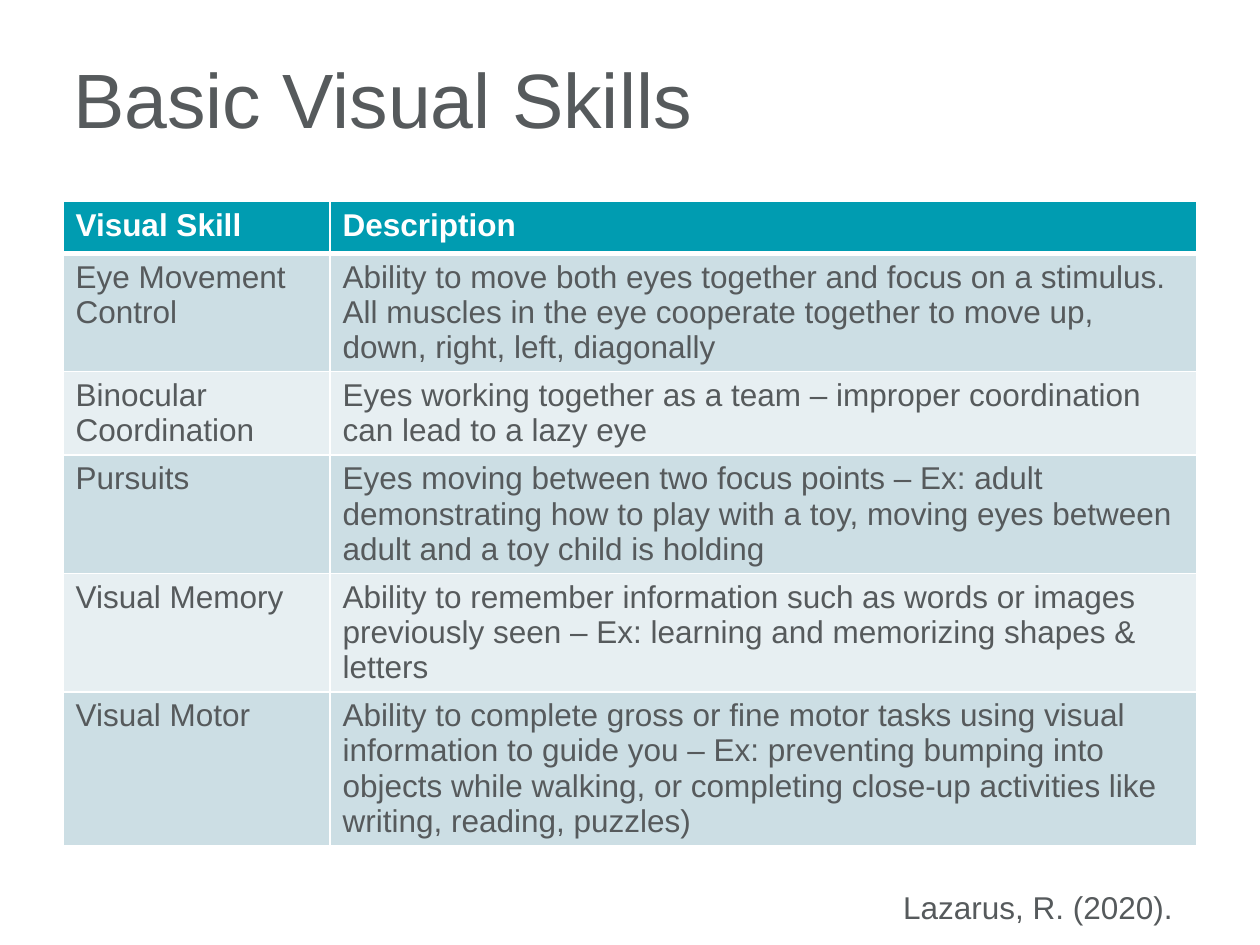
from lxml.etree import SubElement
from pptx import Presentation
from pptx.dml.color import RGBColor
from pptx.enum.text import MSO_ANCHOR, MSO_AUTO_SIZE, PP_ALIGN
from pptx.oxml.ns import qn
from pptx.util import Inches, Pt

COLORS = {
    "text": "565A5C",
    "white": "FFFFFF",
    "header": "009CB1",
    "odd_row": "CCDEE4",
    "even_row": "E7EFF2",
}
TITLE_FONT = {"name": "Arial", "size": Pt(44), "bold": False}
BODY_FONT = {"name": "Arial", "size": Pt(18), "bold": False}
HEADER_FONT = {**BODY_FONT, "bold": True}

SKILLS = [
    ("Visual Skill", "Description"),
    ("Eye Movement Control",
     "Ability to move both eyes together and focus on a stimulus. All muscles "
     "in the eye cooperate together to move up, down, right, left, diagonally"),
    ("Binocular Coordination",
     "Eyes working together as a team – improper coordination can lead to a "
     "lazy eye"),
    ("Pursuits",
     "Eyes moving between two focus points – Ex: adult demonstrating how to "
     "play with a toy, moving eyes between adult and a toy child is holding"),
    ("Visual Memory",
     "Ability to remember information such as words or images previously seen "
     "– Ex: learning and memorizing shapes & letters"),
    ("Visual Motor",
     "Ability to complete gross or fine motor tasks using visual information "
     "to guide you – Ex: preventing bumping into objects while walking, or "
     "completing close-up activities like writing, reading, puzzles)"),
]
COLUMN_WIDTHS = (2.12, 6.88)
ROW_HEIGHT = 0.41


def set_text(text_frame, text, font_format, color):
    text_frame.text = text
    font = text_frame.paragraphs[0].font
    for name, value in font_format.items():
        setattr(font, name, value)
    font.color.rgb = RGBColor.from_string(COLORS[color])


def set_borders(cell, bottom_width):
    """Draw white rules on the four sides of a cell, before its fill is set."""
    properties = cell._tc.get_or_add_tcPr()
    widths = {"a:lnL": 1, "a:lnR": 1, "a:lnT": 1, "a:lnB": bottom_width}
    for tag, width in widths.items():
        line = SubElement(properties, qn(tag), w=str(Pt(width)))
        fill = SubElement(line, qn("a:solidFill"))
        SubElement(fill, qn("a:srgbClr"), val=COLORS["white"])


def add_title(slide, text):
    title = slide.shapes.title
    title.left, title.top = Inches(0.5), Inches(0.3)
    title.width, title.height = Inches(6.79), Inches(1.25)
    text_frame = title.text_frame
    set_text(text_frame, text, TITLE_FONT, "text")
    text_frame.paragraphs[0].alignment = PP_ALIGN.LEFT
    frame_format = {
        "vertical_anchor": MSO_ANCHOR.TOP,
        "auto_size": MSO_AUTO_SIZE.NONE,
        "margin_left": Inches(0.08),
        "margin_top": Inches(0.11),
    }
    for name, value in frame_format.items():
        setattr(text_frame, name, value)


def add_skill_table(slide, rows):
    table = slide.shapes.add_table(
        len(rows), len(COLUMN_WIDTHS), Inches(0.5), Inches(1.6),
        Inches(sum(COLUMN_WIDTHS)), Inches(ROW_HEIGHT * len(rows))).table
    for column, width in zip(table.columns, COLUMN_WIDTHS):
        column.width = Inches(width)
    for row_index, row in enumerate(rows):
        is_header = row_index == 0
        table.rows[row_index].height = Inches(ROW_HEIGHT)
        if is_header:
            fill_color = "header"
        else:
            fill_color = "odd_row" if row_index % 2 else "even_row"
        for column_index, text in enumerate(row):
            cell = table.cell(row_index, column_index)
            set_text(cell.text_frame, text,
                     HEADER_FONT if is_header else BODY_FONT,
                     "white" if is_header else "text")
            # The rule under the header is shared with the first body row
            set_borders(cell, bottom_width=3 if is_header else 1)
            if row_index == 1:
                top_line = cell._tc.tcPr.find(qn("a:lnT"))
                top_line.set("w", str(Pt(3)))
            cell.fill.solid()
            cell.fill.fore_color.rgb = RGBColor.from_string(COLORS[fill_color])


def add_citation(slide, text):
    text_box = slide.shapes.add_textbox(
        Inches(7.07), Inches(7), Inches(2.43), Inches(0.4))
    text_frame = text_box.text_frame
    text_frame.word_wrap = False
    text_frame.auto_size = MSO_AUTO_SIZE.SHAPE_TO_FIT_TEXT
    set_text(text_frame, text, BODY_FONT, "text")


def main():
    presentation = Presentation()
    presentation.slide_width = Inches(10)
    presentation.slide_height = Inches(7.5)
    # Title Only layout
    slide = presentation.slides.add_slide(presentation.slide_layouts[5])
    add_title(slide, "Basic Visual Skills")
    add_skill_table(slide, SKILLS)
    add_citation(slide, "Lazarus, R. (2020).")
    presentation.save("out.pptx")


if __name__ == "__main__":
    main()
